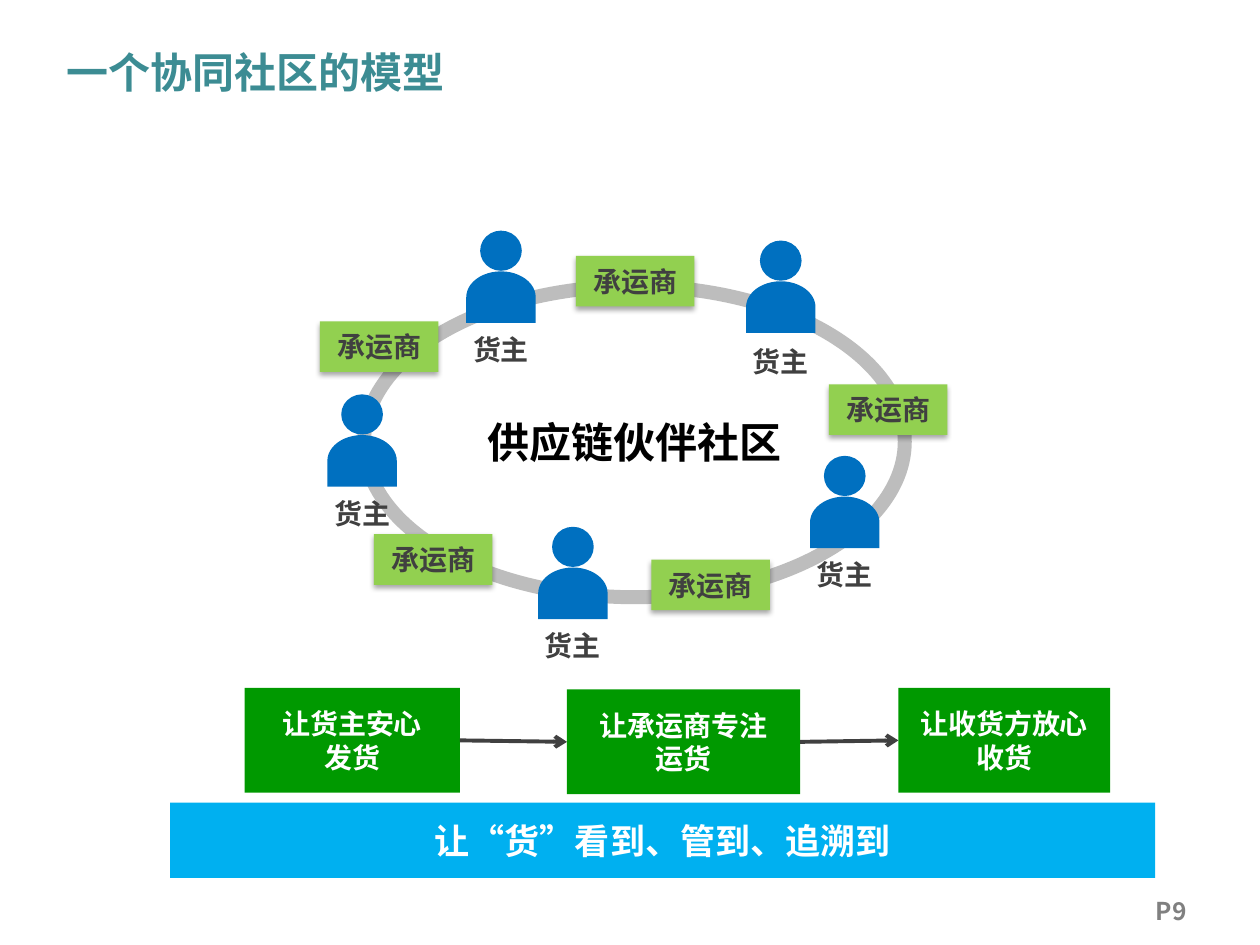
from lxml import etree
from pptx import Presentation
from pptx.dml.color import RGBColor
from pptx.enum.shapes import MSO_CONNECTOR, MSO_SHAPE
from pptx.enum.text import MSO_ANCHOR, PP_ALIGN
from pptx.oxml import parse_xml
from pptx.oxml.ns import nsdecls, qn
from pptx.util import Cm, Pt

RECT, OVAL, BODY = MSO_SHAPE.RECTANGLE, MSO_SHAPE.OVAL, MSO_SHAPE.FLOWCHART_DELAY
LEFT, CENTER = PP_ALIGN.LEFT, PP_ALIGN.CENTER
TOP, MIDDLE = MSO_ANCHOR.TOP, MSO_ANCHOR.MIDDLE
STRAIGHT = MSO_CONNECTOR.STRAIGHT

FONT = "Noto Sans CJK SC"
TEAL = RGBColor(0x3C, 0x8C, 0x93)
GRAY = RGBColor(0x80, 0x80, 0x80)
SILVER = RGBColor(0xBD, 0xBD, 0xBD)
DARK = RGBColor(0x40, 0x40, 0x40)
BLACK = RGBColor(0, 0, 0)
WHITE = RGBColor(0xFF, 0xFF, 0xFF)
BLUE = RGBColor(0x00, 0x70, 0xC0)
SKY = RGBColor(0x00, 0xB0, 0xF0)
LIME = RGBColor(0x92, 0xD0, 0x50)
GREEN = RGBColor(0x00, 0x99, 0x00)

SHADOW = (
    f'<a:effectLst {nsdecls("a")}>'
    '<a:outerShdw blurRad="39370" dist="22860" dir="5400000" rotWithShape="0">'
    '<a:srgbClr val="000000"><a:alpha val="35000"/></a:srgbClr>'
    "</a:outerShdw></a:effectLst>"
)


def write(shape, lines, size, color, align=CENTER, anchor=MIDDLE):
    frame = shape.text_frame
    frame.word_wrap = True
    frame.vertical_anchor = anchor
    for i, line in enumerate(lines):
        para = frame.add_paragraph() if i else frame.paragraphs[0]
        para.alignment = align
        run = para.add_run()
        run.text = line
        font = run.font
        font.size, font.bold, font.name = Pt(size), True, FONT
        font.color.rgb = color
        etree.SubElement(run._r.get_or_add_rPr(), qn("a:ea"), typeface=FONT)


def block(shapes, kind, x, y, w, h, fill):
    shape = shapes.add_shape(kind, Cm(x), Cm(y), Cm(w), Cm(h))
    shape.shadow.inherit = False
    shape.fill.solid()
    shape.fill.fore_color.rgb = fill
    shape.line.fill.background()
    return shape


prs = Presentation()
prs.slide_width, prs.slide_height = Cm(25.4), Cm(19.05)
slide = prs.slides.add_slide(prs.slide_layouts[5])
shapes = slide.shapes

# Title and page number
title = shapes.title
title.left, title.top, title.width, title.height = Cm(1.09), Cm(0.43), Cm(17.32), Cm(2.03)
write(title, ["一个协同社区的模型"], 24, TEAL, LEFT)
page = shapes.add_textbox(Cm(22.81), Cm(17.93), Cm(1.6), Cm(0.76))
write(page, ["P9"], 14, GRAY, anchor=TOP)

# Community ring
ring = block(shapes, OVAL, 7.34, 5.77, 10.9, 6.27, WHITE)
ring.line.color.rgb = SILVER
ring.line.width = Pt(8)
write(ring, ["供应链伙伴社区"], 24, BLACK)

# Cargo owners: head position and drop to the label
owners = [(9.68, 4.65, 1.93), (15.32, 4.85, 1.98), (16.61, 9.19, 1.93),
          (11.13, 10.62, 1.93), (6.88, 7.95, 1.93)]
for x, y, drop in owners:
    group = shapes.add_group_shape().shapes
    block(group, OVAL, x, y, 0.84, 0.81, BLUE)
    body = block(group, BODY, x - 0.1, y + 0.64, 1.04, 1.4, BLUE)
    body.rotation = 270
    label = group.add_textbox(Cm(x - 0.57), Cm(y + drop), Cm(1.98), Cm(0.94))
    write(label, ["货主"], 16, DARK, anchor=TOP)

# Carriers
for x, y in [(11.61, 5.16), (16.71, 7.75), (13.13, 11.28), (7.54, 10.77), (6.45, 6.48)]:
    tag = block(shapes, RECT, x, y, 2.39, 1.02, LIME)
    props = tag._element.spPr
    props.replace(props.find(qn("a:effectLst")), parse_xml(SHADOW))
    write(tag, ["承运商"], 16, DARK)

# Benefit steps
steps = [(4.93, 13.87, 4.34, ["让货主安心", "发货"]),
         (11.43, 13.9, 4.7, ["让承运商专注", "运货"]),
         (18.11, 13.87, 4.27, ["让收货方放心", "收货"])]
boxes = []
for x, y, w, lines in steps:
    box = block(shapes, RECT, x, y, w, 2.11, GREEN)
    write(box, lines, 16, WHITE)
    boxes.append(box)

# Arrows from each step to the next
for start, end in zip(boxes, boxes[1:]):
    arrow = shapes.add_connector(STRAIGHT, 0, 0, 0, 0)
    arrow.begin_connect(start, 3)
    arrow.end_connect(end, 1)
    arrow.line.color.rgb = DARK
    arrow.line.width = Pt(2.25)
    etree.SubElement(arrow.line._get_or_add_ln(), qn("a:tailEnd"), type="arrow")
    etree.SubElement(arrow._element.spPr, qn("a:effectLst"))

# Base bar
bar = block(shapes, RECT, 3.43, 16.18, 19.86, 1.52, SKY)
write(bar, ["让“货”看到、管到、追溯到"], 20, WHITE)

prs.save("out.pptx")
